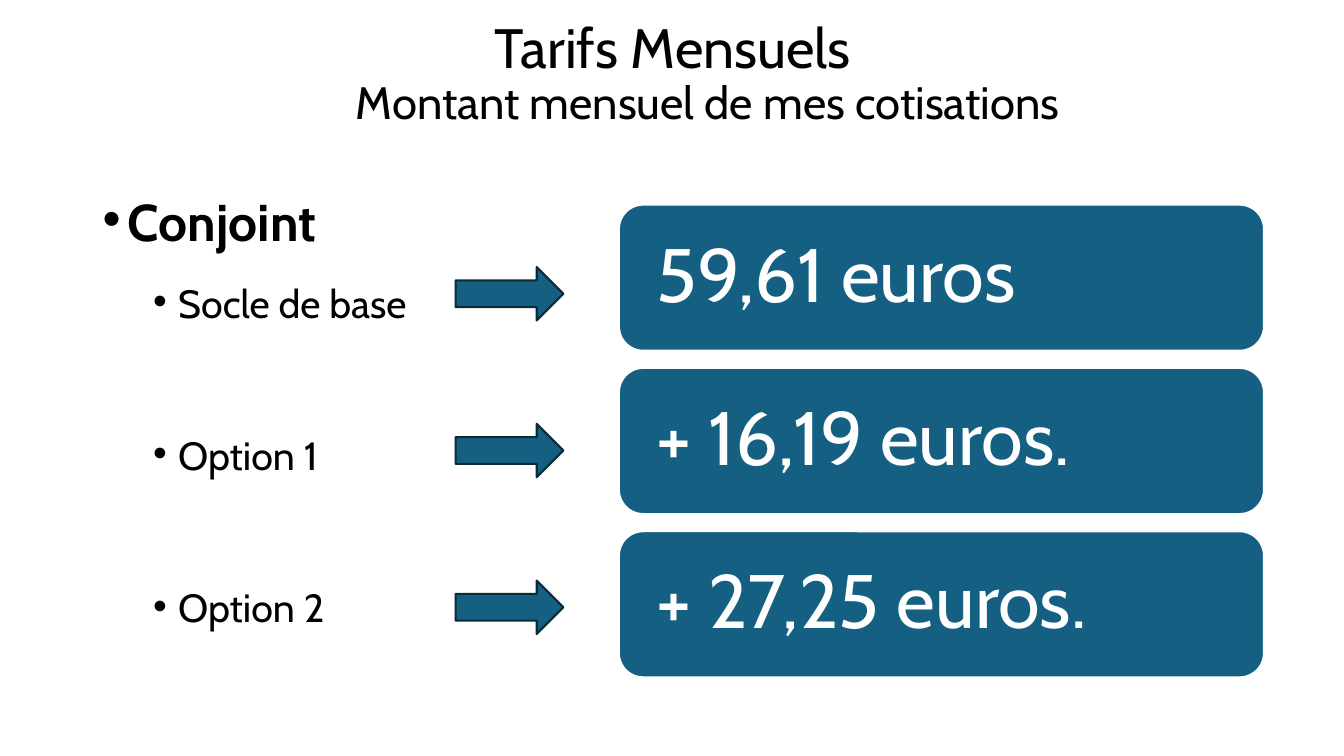
from dataclasses import dataclass

from lxml.etree import SubElement
from pptx import Presentation
from pptx.dml.color import RGBColor
from pptx.enum.shapes import MSO_SHAPE
from pptx.enum.text import MSO_ANCHOR, PP_ALIGN
from pptx.oxml.ns import qn
from pptx.shapes.autoshape import Shape
from pptx.slide import Slide
from pptx.text.text import TextFrame
from pptx.util import Pt


@dataclass(frozen=True)
class Theme:
    font: str = "Cabin"
    ink: RGBColor = RGBColor(0, 0, 0)
    paper: RGBColor = RGBColor(255, 255, 255)
    fill: RGBColor = RGBColor(0x15, 0x60, 0x82)
    edge: RGBColor = RGBColor(0x09, 0x2A, 0x39)
    title: float = 39.6
    sub: float = 32.4
    head: float = 36.9
    item: float = 28.1
    price: float = 54
    stroke: float = 1.5


@dataclass(frozen=True)
class Line:
    text: str
    size: float
    left: float = 0
    before: float = 0
    lead: float = 0.9
    bold: bool = False
    bullet: bool = False
    color: RGBColor = Theme.ink


@dataclass(frozen=True)
class Rate:
    label: str
    price: str
    before: float


@dataclass(frozen=True)
class Box:
    left: float
    top: float
    width: float
    height: float
    pitch: float = 0

    def row(self, index: int) -> "Box":
        return Box(self.left, self.top + index * self.pitch, self.width, self.height)

    def lengths(self) -> tuple[Pt, Pt, Pt, Pt]:
        return Pt(self.left), Pt(self.top), Pt(self.width), Pt(self.height)


THEME = Theme()
HANG = 18
TITLE = Box(97.2, 18, 828, 71.28)
LIST = Box(66.24, 144, 408.24, 342.72)
CARD = Box(442.08, 146.16, 460.8, 104.4, 116.64)
ARROW = Box(325.44, 190.8, 77.04, 38.16, 111.96)

HEADING = [
    Line("Tarifs Mensuels", THEME.title, left=249),
    Line("Montant mensuel de mes cotisations", THEME.sub, left=150),
]
RATES = [
    Rate("Socle de base", "59,61 euros", 30),
    Rate("Option 1", "+ 16,19 euros.", 85),
    Rate("Option 2", "+ 27,25 euros.", 85),
]


def write(frame: TextFrame, lines: list[Line]) -> None:
    frame.word_wrap = True
    for index, line in enumerate(lines):
        para = frame.add_paragraph() if index else frame.paragraphs[0]
        para.alignment = PP_ALIGN.LEFT
        para.line_spacing = line.lead
        para.space_before = Pt(line.before)
        props = para._p.get_or_add_pPr()
        props.set("marL", str(Pt(line.left)))
        if line.bullet:
            props.set("indent", str(Pt(-HANG)))
            SubElement(props, qn("a:buFont")).set("typeface", "Arial")
            SubElement(props, qn("a:buChar")).set("char", "•")
        run = para.add_run()
        run.text = line.text
        run.font.name = THEME.font
        run.font.size = Pt(line.size)
        run.font.bold = line.bold
        run.font.color.rgb = line.color


def add_text(slide: Slide, box: Box, lines: list[Line], anchor: MSO_ANCHOR) -> None:
    frame = slide.shapes.add_textbox(*box.lengths()).text_frame
    frame.vertical_anchor = anchor
    write(frame, lines)


def add_block(slide: Slide, kind: MSO_SHAPE, box: Box, edge: RGBColor) -> Shape:
    shape = slide.shapes.add_shape(kind, *box.lengths())
    shape.shadow.inherit = False
    shape.fill.solid()
    shape.fill.fore_color.rgb = THEME.fill
    shape.line.color.rgb = edge
    shape.line.width = Pt(THEME.stroke)
    return shape


def add_card(slide: Slide, box: Box, price: str) -> None:
    card = add_block(slide, MSO_SHAPE.ROUNDED_RECTANGLE, box, THEME.paper)
    frame = card.text_frame
    frame.margin_left = frame.margin_right = Pt(21.6)
    frame.vertical_anchor = MSO_ANCHOR.MIDDLE
    write(frame, [Line(price, THEME.price, color=THEME.paper)])


def main() -> None:
    deck = Presentation()
    deck.slide_width, deck.slide_height = Pt(960), Pt(540)
    slide = deck.slides.add_slide(deck.slide_layouts[6])

    # Title and subtitle
    add_text(slide, TITLE, HEADING, MSO_ANCHOR.MIDDLE)

    # Bulleted list of options
    lines = [Line("Conjoint", THEME.head, HANG, lead=0.7, bold=True, bullet=True)]
    lines += [
        Line(rate.label, THEME.item, 3 * HANG, rate.before, lead=0.7, bullet=True)
        for rate in RATES
    ]
    add_text(slide, LIST, lines, MSO_ANCHOR.TOP)

    # Price cards, each with its arrow
    for index, rate in enumerate(RATES):
        add_card(slide, CARD.row(index), rate.price)
        add_block(slide, MSO_SHAPE.RIGHT_ARROW, ARROW.row(index), THEME.edge)

    deck.save("out.pptx")


if __name__ == "__main__":
    main()
